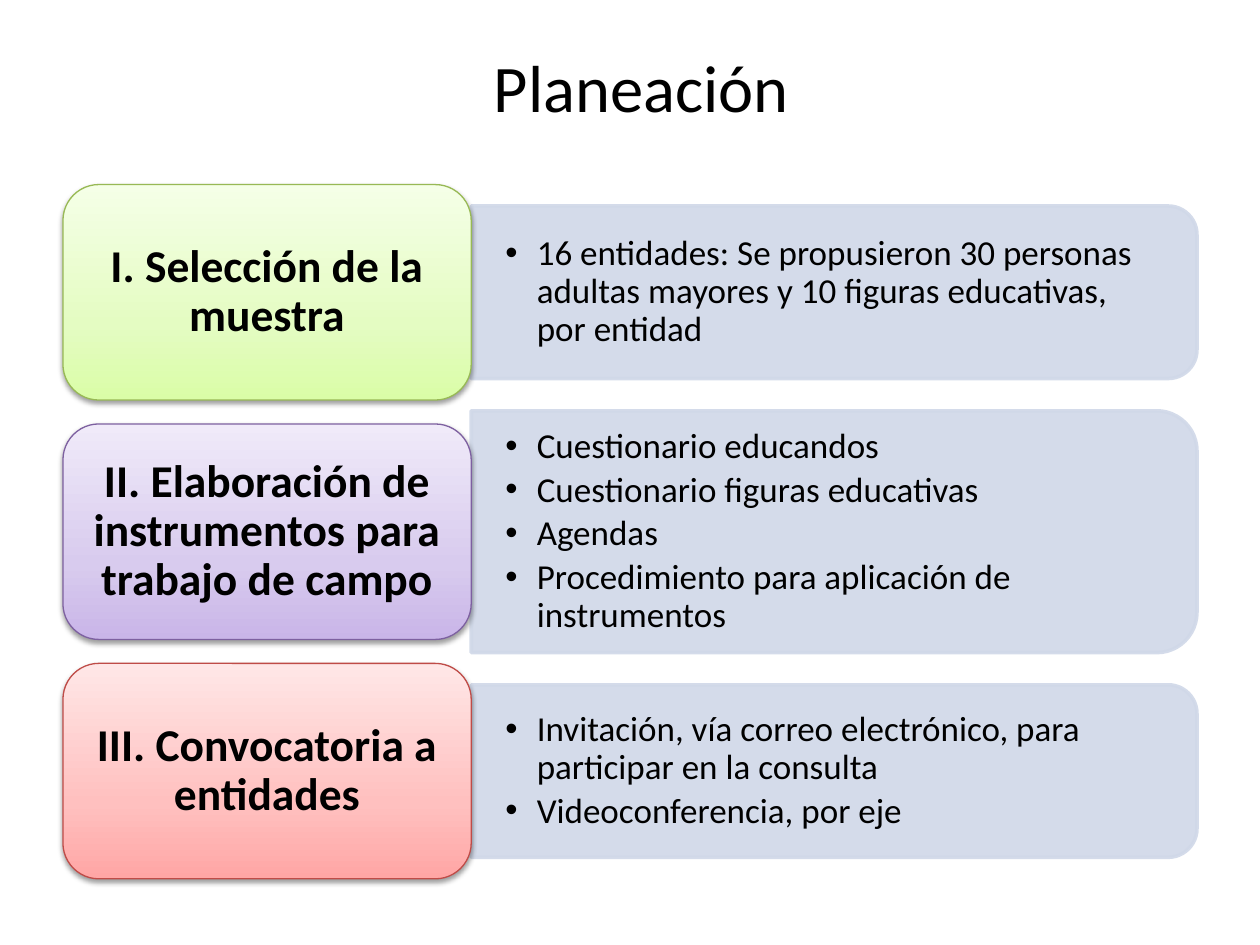
from dataclasses import dataclass

from lxml import etree
from pptx import Presentation
from pptx.dml.color import RGBColor
from pptx.enum.shapes import MSO_SHAPE
from pptx.enum.text import MSO_ANCHOR, PP_ALIGN
from pptx.oxml.ns import qn
from pptx.util import Inches, Pt

ROUNDED = MSO_SHAPE.ROUNDED_RECTANGLE
TWO_ROUNDED = MSO_SHAPE.ROUND_2_SAME_RECTANGLE
MIDDLE = MSO_ANCHOR.MIDDLE
CENTER = PP_ALIGN.CENTER
FONT = "Calibri"
COLORS = {"text": "000000", "panel": "D0D8E8", "shadow": "000000"}

# Row grid, in inches
FIRST_CENTER, ROW_PITCH = 2.32, 1.9
CARD_LEFT, CARD_W, CARD_H = 0.5, 3.24, 1.71
PANEL_LEFT, PANEL_W = CARD_LEFT + CARD_W, 5.76
PANEL_TEXT_W = 5.68


@dataclass
class Stage:
    title: str
    items: list[str]
    gradient: tuple[str, str, str]
    outline: str
    panel_h: float
    text_h: float


STAGES = [
    Stage("I. Selección de la muestra",
          ["16 entidades: Se propusieron 30 personas adultas mayores "
           "y 10 figuras educativas, por entidad"],
          ("DAFDA7", "E4FCC2", "F5FFE7"), "98B955", 1.37, 1.23),
    Stage("II. Elaboración de instrumentos para trabajo de campo",
          ["Cuestionario educandos", "Cuestionario figuras educativas", "Agendas",
           "Procedimiento para aplicación de instrumentos"],
          ("C9B5E8", "D8CBEE", "F0EAF9"), "7D60A0", 1.92, 1.74),
    Stage("III. Convocatoria a entidades",
          ["Invitación, vía correo electrónico, para participar en la consulta",
           "Videoconferencia, por eje"],
          ("FFA6A5", "FFC0BF", "FFE7E7"), "BF4C48", 1.37, 1.23),
]


def rgb(value: str) -> RGBColor:
    return RGBColor.from_string(value)


def add_element(parent, tag: str, **attrs):
    return etree.SubElement(parent, qn(tag), {k: str(v) for k, v in attrs.items()})


def set_font(p, size: float, bold: bool = False) -> None:
    p.font.name, p.font.size, p.font.bold = FONT, Pt(size), bold
    p.font.color.rgb = rgb(COLORS["text"])


def set_frame(tf, side: float, top: float) -> None:
    tf.word_wrap = True
    tf.vertical_anchor = MIDDLE
    tf.margin_left = tf.margin_right = Inches(side)
    tf.margin_top = tf.margin_bottom = Inches(top)


def set_gradient(sp, colors: tuple[str, str, str]) -> None:
    """Three stops, from the bottom of the shape to its top."""
    sp.fill.gradient()
    sp.fill.gradient_angle = 90
    stops = sp._element.spPr.find(qn("a:gradFill")).find(qn("a:gsLst"))
    for stop in list(stops):
        stops.remove(stop)
    for share, color in zip((0, 35, 100), colors):
        stop = add_element(stops, "a:gs", pos=share * 1000)
        add_element(stop, "a:srgbClr", val=color)


def set_shadow(sp) -> None:
    sp.shadow.inherit = False
    effects = sp._element.spPr.find(qn("a:effectLst"))
    outer = add_element(effects, "a:outerShdw", blurRad=Pt(3.1), dist=Pt(1.6),
                        dir=5400000, rotWithShape=0)
    color = add_element(outer, "a:srgbClr", val=COLORS["shadow"])
    add_element(color, "a:alpha", val=38000)


def draw_panel(shapes, stage: Stage, center: float) -> None:
    """Panel turned a quarter, so that its rounded corners face right."""
    sp = shapes.add_shape(TWO_ROUNDED,
                          Inches(PANEL_LEFT + (PANEL_W - stage.panel_h) / 2),
                          Inches(center - PANEL_W / 2),
                          Inches(stage.panel_h), Inches(PANEL_W))
    sp.rotation = 90
    sp.shadow.inherit = False
    sp.fill.solid()
    sp.fill.fore_color.rgb = sp.line.color.rgb = rgb(COLORS["panel"])
    sp.line.width = Pt(2)
    for color in sp._element.spPr.iter(qn("a:srgbClr")):
        add_element(color, "a:alpha", val=90000)


def draw_items(shapes, stage: Stage, center: float) -> None:
    box = shapes.add_textbox(Inches(PANEL_LEFT), Inches(center - stage.text_h / 2),
                             Inches(PANEL_TEXT_W), Inches(stage.text_h))
    tf = box.text_frame
    set_frame(tf, 0.27, 0.14)
    tf.text = "\n".join(stage.items)
    for p in tf.paragraphs:
        props = p._p.get_or_add_pPr()
        props.set("marL", str(Inches(0.25)))
        props.set("indent", str(-Inches(0.25)))
        add_element(props, "a:buFont", typeface="Arial")
        add_element(props, "a:buChar", char="•")
        p.line_spacing, p.space_after = 0.9, Pt(3.3)
        set_font(p, 20)


def draw_card(shapes, stage: Stage, center: float) -> None:
    sp = shapes.add_shape(ROUNDED, Inches(CARD_LEFT), Inches(center - CARD_H / 2),
                          Inches(CARD_W), Inches(CARD_H))
    set_gradient(sp, stage.gradient)
    sp.line.color.rgb = rgb(stage.outline)
    sp.line.width = Pt(0.75)
    set_shadow(sp)
    tf = sp.text_frame
    set_frame(tf, 0.11, 0.05)
    tf.text = stage.title
    p = tf.paragraphs[0]
    p.alignment, p.line_spacing = CENTER, 0.9
    set_font(p, 26, bold=True)


def main() -> None:
    prs = Presentation()
    prs.slide_width, prs.slide_height = Inches(10), Inches(7.5)
    slide = prs.slides.add_slide(prs.slide_layouts[5])
    title = slide.shapes.title
    title.left, title.top = Inches(0.59), Inches(0.06)
    title.width, title.height = Inches(9), Inches(1.25)
    title.top = Inches(0.06)
    title.text_frame.text = "Planeación"
    title.text_frame.vertical_anchor = MIDDLE
    p = title.text_frame.paragraphs[0]
    p.alignment = CENTER
    set_font(p, 38)
    for row, stage in enumerate(STAGES):
        center = FIRST_CENTER + row * ROW_PITCH
        for draw in (draw_panel, draw_items, draw_card):
            draw(slide.shapes, stage, center)
    prs.save("out.pptx")


if __name__ == "__main__":
    main()
